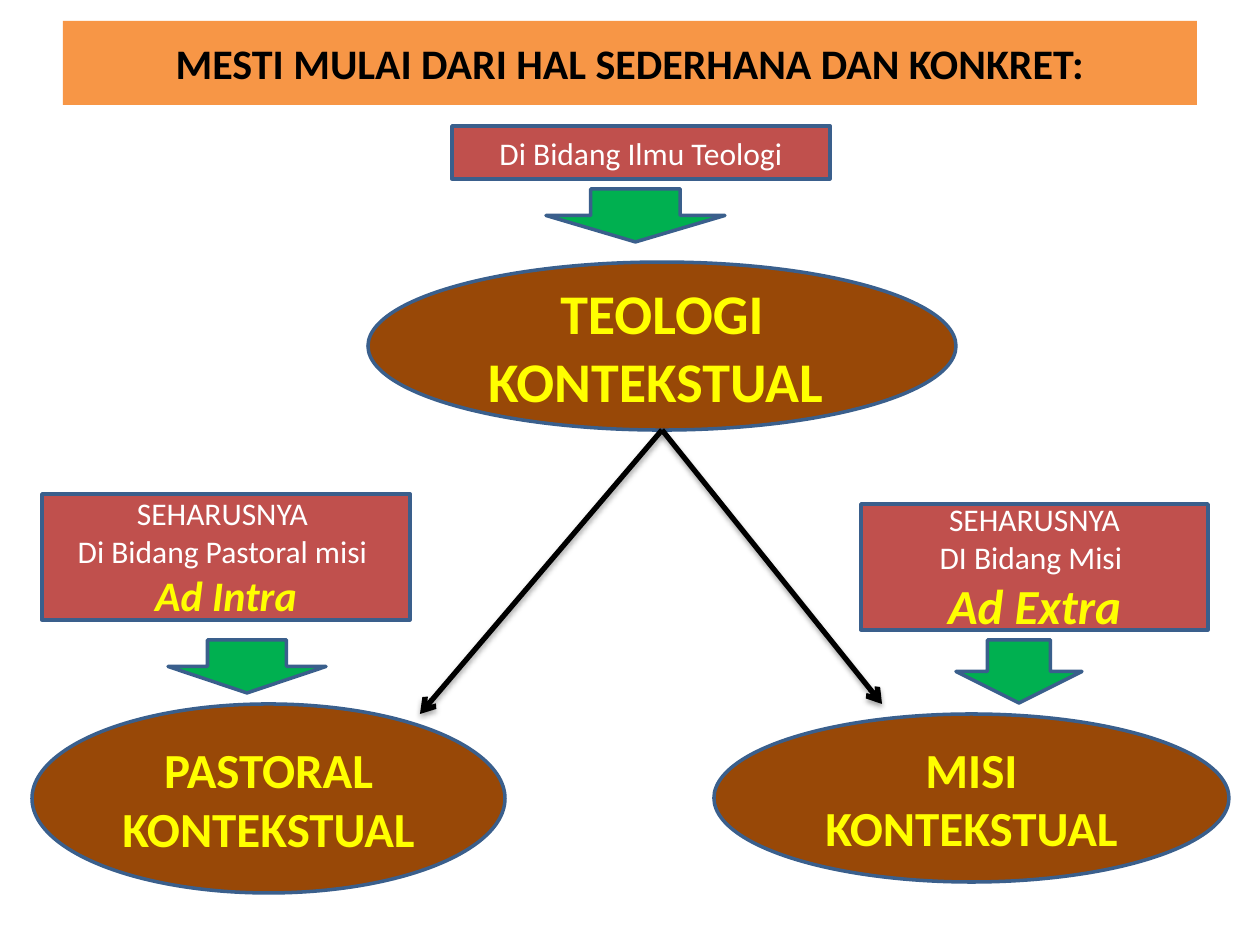
import pptx
import pptx.util
import pptx.dml.color
import pptx.enum.shapes
import pptx.enum.text
import pptx.oxml

RGBColor = pptx.dml.color.RGBColor
SHAPE = pptx.enum.shapes.MSO_SHAPE
ORANGE = RGBColor(0xF7, 0x96, 0x46)
BROWN = RGBColor(0x98, 0x48, 0x07)
RED = RGBColor(0xC0, 0x50, 0x4D)
GREEN = RGBColor(0x00, 0xB0, 0x50)
BLUE = RGBColor(0x3A, 0x5F, 0x8C)
YELLOW = RGBColor(0xFF, 0xFF, 0x00)
WHITE = RGBColor(0xFF, 0xFF, 0xFF)
BLACK = RGBColor(0x00, 0x00, 0x00)

FONT = "Calibri"
PX_PER_INCH = 126
NS = 'xmlns:a="http://schemas.openxmlformats.org/drawingml/2006/main"'
ARROWHEAD = f'<a:tailEnd {NS} type="arrow"/>'
SOFT_SHADOW = (
    f'<a:effectLst {NS}><a:outerShdw blurRad="40000" dist="23000" dir="5400000" rotWithShape="0">'
    '<a:srgbClr val="000000"><a:alpha val="35000"/></a:srgbClr></a:outerShdw></a:effectLst>'
)


def px(length):
    return pptx.util.Emu(round(length * 914400 / PX_PER_INCH))


class Diagram:
    def __init__(self, slide):
        self.slide = slide

    def shape(self, kind, box, fill, outline=BLUE):
        shape = self.slide.shapes.add_shape(kind, *map(px, box))
        shape.shadow.inherit = False
        shape.fill.solid()
        shape.fill.fore_color.rgb = fill
        if outline is None:
            shape.line.fill.background()
        else:
            shape.line.color.rgb = outline
            shape.line.width = pptx.util.Pt(2)
        return shape

    def add_lines(self, shape, lines):
        """Each line is (text, size, colour, bold, italic)."""
        frame = shape.text_frame
        frame.word_wrap = True
        frame.vertical_anchor = pptx.enum.text.MSO_ANCHOR.MIDDLE
        for index, (text, size, color, bold, italic) in enumerate(lines):
            paragraph = frame.add_paragraph() if index else frame.paragraphs[0]
            paragraph.alignment = pptx.enum.text.PP_ALIGN.CENTER
            run = paragraph.add_run()
            run.text = text
            run.font.name = FONT
            run.font.size = pptx.util.Pt(size)
            run.font.color.rgb = color
            run.font.bold = bold
            run.font.italic = italic

    def title(self, box, text):
        self.add_lines(self.shape(SHAPE.RECTANGLE, box, ORANGE, None),
                       [(text, 24, BLACK, True, False)])

    def theme(self, box, text, size):
        self.add_lines(self.shape(SHAPE.OVAL, box, BROWN),
                       [(text, size, YELLOW, True, False)])

    def field(self, box, plain_lines, emphasis=None, emphasis_size=24):
        lines = [(text, 18, WHITE, False, False) for text in plain_lines]
        if emphasis:
            lines.append((emphasis, emphasis_size, YELLOW, True, True))
        self.add_lines(self.shape(SHAPE.RECTANGLE, box, RED), lines)

    def down_arrow(self, box):
        self.shape(SHAPE.DOWN_ARROW, box, GREEN)

    def branch(self, start, end):
        branch = self.slide.shapes.add_connector(
            pptx.enum.shapes.MSO_CONNECTOR.STRAIGHT, *map(px, start + end))
        branch.line.color.rgb = BLACK
        branch.line.width = pptx.util.Pt(3)
        properties = branch.element.spPr
        properties.ln.append(pptx.oxml.parse_xml(ARROWHEAD))
        properties.append(pptx.oxml.parse_xml(SOFT_SHADOW))


def main():
    presentation = pptx.Presentation()
    presentation.slide_width = pptx.util.Inches(10)
    presentation.slide_height = pptx.util.Inches(7.5)
    diagram = Diagram(presentation.slides.add_slide(presentation.slide_layouts[6]))

    # Heading
    diagram.title((63, 21, 1134, 84), "MESTI MULAI DARI HAL SEDERHANA DAN KONKRET:")

    # Contextual theology at the top
    diagram.theme((368, 262, 588, 168), "TEOLOGI KONTEKSTUAL ", 32)
    diagram.field((452, 126, 378, 53), ["Di Bidang Ilmu Teologi"])

    # Fields of pastoral work and mission
    diagram.field((42, 494, 368, 126), ["SEHARUSNYA ", "Di Bidang Pastoral misi "], "Ad Intra")
    diagram.field((861, 504, 347, 126), ["SEHARUSNYA", "DI Bidang Misi "], "Ad Extra", 28)

    # Resulting contextual forms
    diagram.theme((32, 704, 473, 189), "PASTORAL KONTEKSTUAL", 28)
    diagram.theme((714, 714, 515, 168), "MISI KONTEKSTUAL", 28)

    # Arrows from each field to its form
    for box in ((546, 189, 179, 53), (168, 640, 158, 53), (956, 640, 126, 63)):
        diagram.down_arrow(box)

    # Branches from theology to both forms
    for end in ((420, 714), (882, 704)):
        diagram.branch((662, 430), end)

    presentation.save("out.pptx")


if __name__ == "__main__":
    main()
